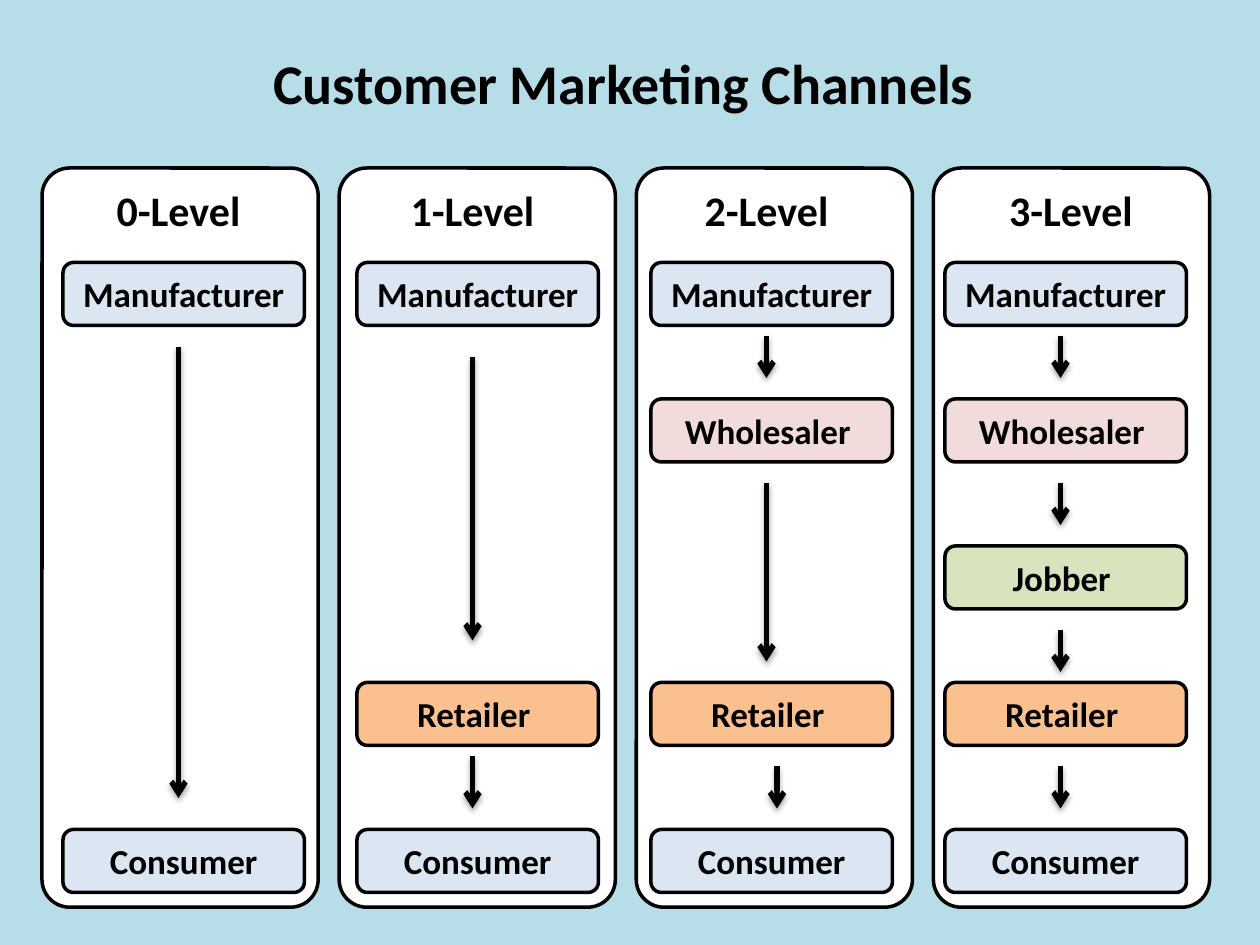
from dataclasses import dataclass

from lxml.etree import SubElement
from pptx import Presentation
from pptx.dml.color import RGBColor
from pptx.enum.shapes import MSO_CONNECTOR, MSO_SHAPE
from pptx.enum.text import MSO_ANCHOR, PP_ALIGN
from pptx.oxml.ns import qn
from pptx.util import Emu, Pt

PX = 7620  # EMU per px, 120 px to the inch


@dataclass(frozen=True)
class Theme:
    font: str = "Calibri"
    background: str = "B7DEE8"
    panel: str = "FFFFFF"
    ink: str = "000000"
    end_point: str = "DCE6F2"
    wholesaler: str = "F2DCDB"
    jobber: str = "D7E4BD"
    retailer: str = "FAC090"
    title_size: int = 32
    level_size: int = 24
    step_size: int = 20
    outline: int = 2
    arrow: int = 3


@dataclass(frozen=True)
class Box:
    left: int
    top: int
    width: int
    height: int


@dataclass(frozen=True)
class Step:
    text: str
    top: int
    fill: str


@dataclass(frozen=True)
class Arrow:
    top: int
    bottom: int
    shift: int = 0


@dataclass(frozen=True)
class Channel:
    level: str
    level_left: int
    steps: tuple[Step, ...]
    arrows: tuple[Arrow, ...]


THEME = Theme()
PANEL, PANEL_PITCH = Box(40, 160, 263, 704), 283
STEP_LEFT, STEP_WIDTH, STEP_HEIGHT, STEP_PITCH = 60, 230, 60, 280
LEVEL_TOP, LEVEL_WIDTH = 170, 200
ARROW_LEFT = 170

# Trailing spaces belong to the wording and shift the centred text.
MANUFACTURER = Step("Manufacturer", 250, THEME.end_point)
WHOLESALER = Step("Wholesaler ", 380, THEME.wholesaler)
JOBBER = Step("Jobber ", 520, THEME.jobber)
RETAILER = Step("Retailer ", 650, THEME.retailer)
CONSUMER = Step("Consumer", 790, THEME.end_point)

CHANNELS = (
    Channel("0-Level", 70, (MANUFACTURER, CONSUMER), (Arrow(330, 760),)),
    Channel("1-Level", 350, (MANUFACTURER, RETAILER, CONSUMER),
            (Arrow(340, 610), Arrow(720, 770))),
    Channel("2-Level", 630, (MANUFACTURER, WHOLESALER, RETAILER, CONSUMER),
            (Arrow(320, 360), Arrow(460, 630), Arrow(730, 770, shift=10))),
    Channel("3-Level", 920,
            (MANUFACTURER, WHOLESALER, JOBBER, RETAILER, CONSUMER),
            (Arrow(320, 360), Arrow(460, 500), Arrow(600, 640),
             Arrow(730, 770))),
)


def px(*lengths: int) -> list[Emu]:
    return [Emu(length * PX) for length in lengths]


def write(shape, text: str, size: int) -> None:
    frame = shape.text_frame
    frame.word_wrap = True
    frame.vertical_anchor = MSO_ANCHOR.MIDDLE
    paragraph = frame.paragraphs[0]
    paragraph.alignment = PP_ALIGN.CENTER
    run = paragraph.add_run()
    run.text = text
    font_format = {"name": THEME.font, "size": Pt(size), "bold": True}
    for name, value in font_format.items():
        setattr(run.font, name, value)
    run.font.color.rgb = RGBColor.from_string(THEME.ink)


def add_rounded(shapes, box: Box, fill: str | None = None):
    """Add a rounded rectangle; without a fill it has no outline either."""
    shape = shapes.add_shape(MSO_SHAPE.ROUNDED_RECTANGLE,
                             *px(box.left, box.top, box.width, box.height))
    shape.shadow.inherit = False
    if fill is None:
        shape.fill.background()
        shape.line.fill.background()
    else:
        shape.fill.solid()
        shape.fill.fore_color.rgb = RGBColor.from_string(fill)
        shape.line.color.rgb = RGBColor.from_string(THEME.ink)
        shape.line.width = Pt(THEME.outline)
    return shape


def add_arrow(shapes, x: int, arrow: Arrow) -> None:
    """Add a downward arrow with a soft shadow below it."""
    connector = shapes.add_connector(MSO_CONNECTOR.STRAIGHT,
                                     *px(x, arrow.top, x, arrow.bottom))
    connector.line.color.rgb = RGBColor.from_string(THEME.ink)
    connector.line.width = Pt(THEME.arrow)
    SubElement(connector.line._get_or_add_ln(), qn("a:tailEnd"), type="arrow")
    effects = SubElement(connector._element.spPr, qn("a:effectLst"))
    shadow = SubElement(effects, qn("a:outerShdw"), blurRad="40000",
                        dist="23000", dir="5400000", rotWithShape="0")
    color = SubElement(shadow, qn("a:srgbClr"), val=THEME.ink)
    SubElement(color, qn("a:alpha"), val="35000")


def add_title(slide, text: str, box: Box) -> None:
    title = slide.shapes.title
    for name in ("left", "top", "width", "height"):
        setattr(title, name, px(getattr(box, name))[0])
    write(title, text, THEME.title_size)


def add_channel(shapes, column: int, channel: Channel) -> None:
    offset = column * STEP_PITCH
    level = add_rounded(shapes, Box(channel.level_left, LEVEL_TOP,
                                    LEVEL_WIDTH, STEP_HEIGHT))
    write(level, channel.level, THEME.level_size)
    for step in channel.steps:
        box = Box(STEP_LEFT + offset, step.top, STEP_WIDTH, STEP_HEIGHT)
        write(add_rounded(shapes, box, step.fill), step.text, THEME.step_size)
    for arrow in channel.arrows:
        add_arrow(shapes, ARROW_LEFT + offset + arrow.shift, arrow)


def main() -> None:
    deck = Presentation()
    deck.slide_width, deck.slide_height = px(1200, 900)
    slide = deck.slides.add_slide(deck.slide_layouts[5])
    slide.background.fill.solid()
    slide.background.fill.fore_color.rgb = RGBColor.from_string(THEME.background)

    add_title(slide, "Customer Marketing Channels ", Box(60, 36, 1080, 84))
    panels = slide.shapes.add_group_shape().shapes
    for column in range(len(CHANNELS)):
        box = Box(PANEL.left + column * PANEL_PITCH, PANEL.top,
                  PANEL.width, PANEL.height)
        add_rounded(panels, box, THEME.panel).adjustments[0] = 0.1
    for column, channel in enumerate(CHANNELS):
        add_channel(slide.shapes, column, channel)
    deck.save("out.pptx")


if __name__ == "__main__":
    main()
